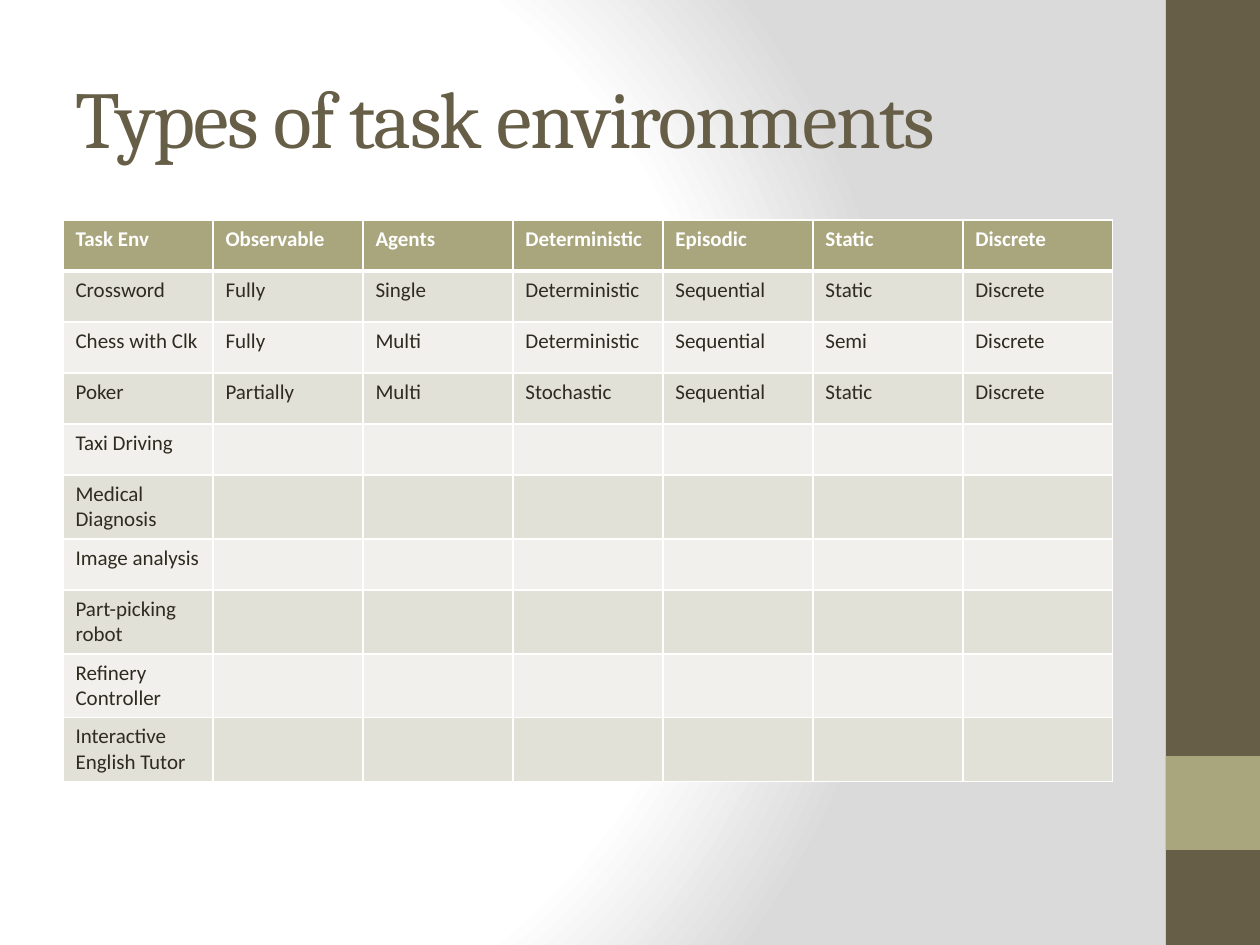
"""Build the slide that compares types of task environments in a table."""
from dataclasses import dataclass

from pptx import Presentation
from pptx.dml.color import RGBColor
from pptx.enum.shapes import MSO_SHAPE as Shape
from pptx.enum.text import MSO_ANCHOR as Anchor, PP_ALIGN as Align
from pptx.oxml import parse_xml
from pptx.oxml.ns import nsdecls, qn
from pptx.slide import Slide
from pptx.table import _Cell as Cell
from pptx.util import Emu, Pt

EMU_PER_PX = 914400 / 126
COLORS = {
    "title": "675E47",
    "sidebar": "675E47",
    "accent": "A9A57C",
    "text": "2F2B20",
    "white": "FFFFFF",
    "shade": "DADADA",
    "odd_row": "E2E1D7",
    "even_row": "F1F0EC",
}
HEADING_FONT = "Cambria"
BODY_FONT = "Calibri"
COLUMN_WIDTH = 150
ROW_HEIGHT = 51
GRADIENT_STOPS = ((0, "white"), (75, "white"), (100, "shade"))
ROWS = (
    ("Task Env", "Observable", "Agents", "Deterministic", "Episodic", "Static", "Discrete"),
    ("Crossword", "Fully", "Single", "Deterministic", "Sequential", "Static", "Discrete"),
    ("Chess with Clk", "Fully", "Multi", "Deterministic", "Sequential", "Semi", "Discrete"),
    ("Poker", "Partially", "Multi", "Stochastic", "Sequential", "Static", "Discrete"),
    ("Taxi Driving",),
    ("Medical Diagnosis",),
    ("Image analysis",),
    ("Part-picking robot",),
    ("Refinery Controller",),
    ("Interactive English Tutor",),
)


@dataclass(frozen=True)
class Box:
    left: int
    top: int
    width: int
    height: int

    def emu(self) -> tuple[Emu, Emu, Emu, Emu]:
        return px(self.left), px(self.top), px(self.width), px(self.height)


@dataclass(frozen=True)
class Band:
    box: Box
    color: str


SLIDE_SIZE = Box(0, 0, 1260, 945)
TITLE_BOX = Box(63, 38, 1050, 157)
TABLE_BOX = Box(63, 220, COLUMN_WIDTH * len(ROWS[0]), ROW_HEIGHT * len(ROWS))
BANDS = (
    Band(Box(1166, 0, 94, 945), "sidebar"),
    Band(Box(1166, 756, 94, 94), "accent"),
)


def px(length: int) -> Emu:
    return Emu(round(length * EMU_PER_PX))


def rgb(name: str) -> RGBColor:
    return RGBColor.from_string(COLORS[name])


def set_background(slide: Slide) -> None:
    slide.background.fill.solid()
    solid_fill = next(slide.element.iter(qn("a:solidFill")))
    stops = "".join(
        f'<a:gs pos="{position * 1000}"><a:srgbClr val="{COLORS[color]}"/></a:gs>'
        for position, color in GRADIENT_STOPS
    )
    gradient = parse_xml(
        f'<a:gradFill {nsdecls("a")} rotWithShape="1"><a:gsLst>{stops}</a:gsLst>'
        '<a:path path="circle"><a:fillToRect l="20000" t="50000" r="100000" b="50000"/>'
        "</a:path></a:gradFill>"
    )
    solid_fill.getparent().replace(solid_fill, gradient)


def add_band(slide: Slide, band: Band) -> None:
    shape = slide.shapes.add_shape(Shape.RECTANGLE, *band.box.emu())
    shape.shadow.inherit = False
    shape.fill.solid()
    shape.fill.fore_color.rgb = rgb(band.color)
    shape.line.fill.background()


def set_title(slide: Slide, text: str) -> None:
    title = slide.shapes.title
    title.left, title.top, title.width, title.height = TITLE_BOX.emu()
    title.text_frame.text = text
    title.text_frame.vertical_anchor = Anchor.MIDDLE
    paragraph = title.text_frame.paragraphs[0]
    paragraph.alignment = Align.LEFT
    font = paragraph.runs[0].font
    font.name, font.size = HEADING_FONT, Pt(46)
    font.color.rgb = rgb("title")
    paragraph.runs[0].font._element.set("spc", "-100")


def set_border(cell: Cell, side: str, points: int) -> None:
    cell._tc.get_or_add_tcPr().append(parse_xml(
        f'<a:ln{side} {nsdecls("a")} w="{Pt(points)}"><a:solidFill>'
        f'<a:srgbClr val="{COLORS["white"]}"/></a:solidFill></a:ln{side}>'
    ))


def format_cell(cell: Cell, text: str, row: int) -> None:
    is_header = row == 0
    border_widths = {"L": 1, "R": 1, "T": 3 if row == 1 else 1, "B": 3 if is_header else 1}
    for side, points in border_widths.items():
        set_border(cell, side, points)
    cell.fill.solid()
    cell.fill.fore_color.rgb = rgb("accent" if is_header else "odd_row" if row % 2 else "even_row")
    if text:
        cell.text_frame.text = text
        font = cell.text_frame.paragraphs[0].runs[0].font
        font.name, font.size, font.bold = BODY_FONT, Pt(12), is_header
        font.color.rgb = rgb("white" if is_header else "text")


def add_environment_table(slide: Slide) -> None:
    table = slide.shapes.add_table(len(ROWS), len(ROWS[0]), *TABLE_BOX.emu()).table
    for column in table.columns:
        column.width = px(COLUMN_WIDTH)
    for row, texts in enumerate(ROWS):
        table.rows[row].height = px(ROW_HEIGHT)
        for column in range(len(ROWS[0])):
            text = texts[column] if column < len(texts) else ""
            format_cell(table.cell(row, column), text, row)


def main() -> None:
    presentation = Presentation()
    presentation.slide_width = px(SLIDE_SIZE.width)
    presentation.slide_height = px(SLIDE_SIZE.height)
    slide = presentation.slides.add_slide(presentation.slide_layouts.get_by_name("Title Only"))
    set_background(slide)
    for band in BANDS:
        add_band(slide, band)
    set_title(slide, "Types of task environments")
    add_environment_table(slide)
    presentation.save("out.pptx")


if __name__ == "__main__":
    main()
